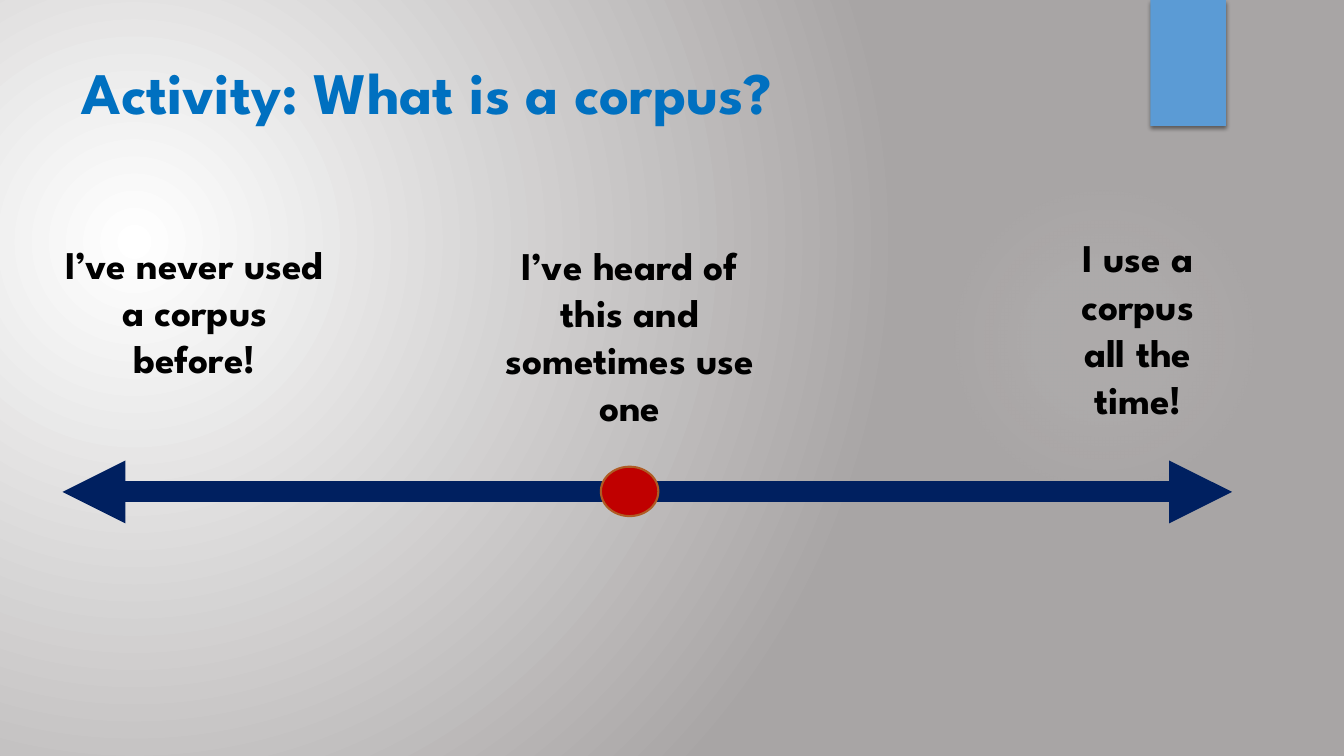
from dataclasses import dataclass
from lxml.etree import SubElement as Sub
from pptx import Presentation
from pptx.dml.color import RGBColor as Rgb
from pptx.enum.shapes import MSO_CONNECTOR as Link, MSO_SHAPE as Kind
from pptx.enum.text import MSO_ANCHOR as Anchor, MSO_AUTO_SIZE as Auto, PP_ALIGN as Align
from pptx.oxml.ns import qn
from pptx.util import Inches, Pt


@dataclass(frozen=True)
class Theme:
    font: str = "League Spartan"
    head: int = 42
    body: int = 28
    title: str = "0070C0"
    ink: str = "000000"
    axis: str = "002060"
    dot: str = "C00000"
    rim: str = "AF5C24"
    tab: str = "5B9BD5"
    shade: str = "000000"
    back: tuple = ((0, "FFFFFF", 100), (100, "A8A5A5", 100))
    glow: tuple = ((0, "F1F0F0", 7), (36, "F1F0F0", 6), (69, "F1F0F0", 0))


class Deck:
    def __init__(self, theme):
        self.theme = theme
        self.file = Presentation()
        self.file.slide_width = Inches(13.33)
        self.file.slide_height = Inches(7.5)
        self.slide = self.file.slides.add_slide(self.file.slide_layouts[5])
        self.shapes = self.slide.shapes

    def blend(self, fill, owner, stops, focus):
        fill.gradient()
        grad = owner.xpath(".//a:gradFill")[0]
        for part in list(grad):
            grad.remove(part)
        row = Sub(grad, qn("a:gsLst"))
        for pos, hue, alpha in stops:
            stop = Sub(row, qn("a:gs"), pos=str(pos * 1000))
            tone = Sub(stop, qn("a:srgbClr"), val=hue)
            if alpha < 100:
                Sub(tone, qn("a:alpha"), val=str(alpha * 1000))
        ring = Sub(grad, qn("a:path"), path="circle")
        sides = {side: str(part * 1000) for side, part in zip("ltrb", focus)}
        Sub(ring, qn("a:fillToRect"), **sides)

    def back(self):
        self.blend(self.slide.background.fill, self.slide.element,
                   self.theme.back, (45, 65, 125, 100))

    def shape(self, kind, box, hue=None, rim=None):
        item = self.shapes.add_shape(kind, *map(Inches, box))
        item.shadow.inherit = False
        if hue:
            item.fill.solid()
            item.fill.fore_color.rgb = Rgb.from_string(hue)
        if rim:
            item.line.color.rgb = Rgb.from_string(rim)
            item.line.width = Pt(1.5)
        else:
            item.line.fill.background()
        return item

    def glow(self, box):
        item = self.shape(Kind.OVAL, box)
        self.blend(item.fill, item.element, self.theme.glow, (50,) * 4)

    def tab(self, box):
        item = self.shape(Kind.RECTANGLE, box, self.theme.tab)
        fx = item.element.spPr.find(qn("a:effectLst"))
        drop = Sub(fx, qn("a:outerShdw"), blurRad=str(Pt(3)), dist=str(Pt(2)),
                   dir="5400000", algn="ctr", rotWithShape="0")
        tone = Sub(drop, qn("a:srgbClr"), val=self.theme.shade)
        Sub(tone, qn("a:alpha"), val="45000")

    def words(self, frame, text, size, hue, align):
        frame.word_wrap = True
        frame.vertical_anchor = Anchor.TOP
        para = frame.paragraphs[0]
        para.alignment = align
        run = para.add_run()
        run.text = text
        run.font.name = self.theme.font
        run.font.size = Pt(size)
        run.font.bold = True
        run.font.color.rgb = Rgb.from_string(hue)

    def title(self, text, box):
        item = self.shapes.title
        item.left, item.top, item.width, item.height = map(Inches, box)
        self.shapes.element.append(item.element)
        item.text_frame.auto_size = Auto.NONE
        self.words(item.text_frame, text, self.theme.head, self.theme.title, Align.LEFT)

    def label(self, text, box):
        frame = self.shapes.add_textbox(*map(Inches, box)).text_frame
        self.words(frame, text, self.theme.body, self.theme.ink, Align.CENTER)
        frame.auto_size = Auto.SHAPE_TO_FIT_TEXT

    def arrow(self, left, right, top):
        item = self.shapes.add_connector(
            Link.STRAIGHT, *map(Inches, (left, top, right, top)))
        item.line.color.rgb = Rgb.from_string(self.theme.axis)
        item.line.width = Pt(15)
        line = item.element.spPr.find(qn("a:ln"))
        for end in ("a:headEnd", "a:tailEnd"):
            Sub(line, qn(end), type="triangle")
        Sub(item.element.spPr, qn("a:effectLst"))

    def dot(self, box):
        self.shape(Kind.OVAL, box, self.theme.dot, self.theme.rim)


def main():
    deck = Deck(Theme())
    deck.back()
    deck.glow((9.41, 1.83, 3.08, 3.08))
    deck.tab((11.41, 0, 0.75, 1.25))
    deck.title("Activity: What is a corpus?", (0.71, 0.5, 10.29, 1.53))
    deck.arrow(0.62, 12.22, 4.88)
    deck.dot((5.96, 4.63, 0.57, 0.49))
    for text, left, top, width in (
        ("I’ve never used a corpus before!", 0.54, 2.33, 2.78),
        ("I’ve heard of this and sometimes use one", 4.74, 2.34, 3.01),
        ("I use a corpus all the time!", 10.47, 2.27, 1.63),
    ):
        deck.label(text, (left, top, width, 1.99))
    deck.file.save("out.pptx")


if __name__ == "__main__":
    main()
